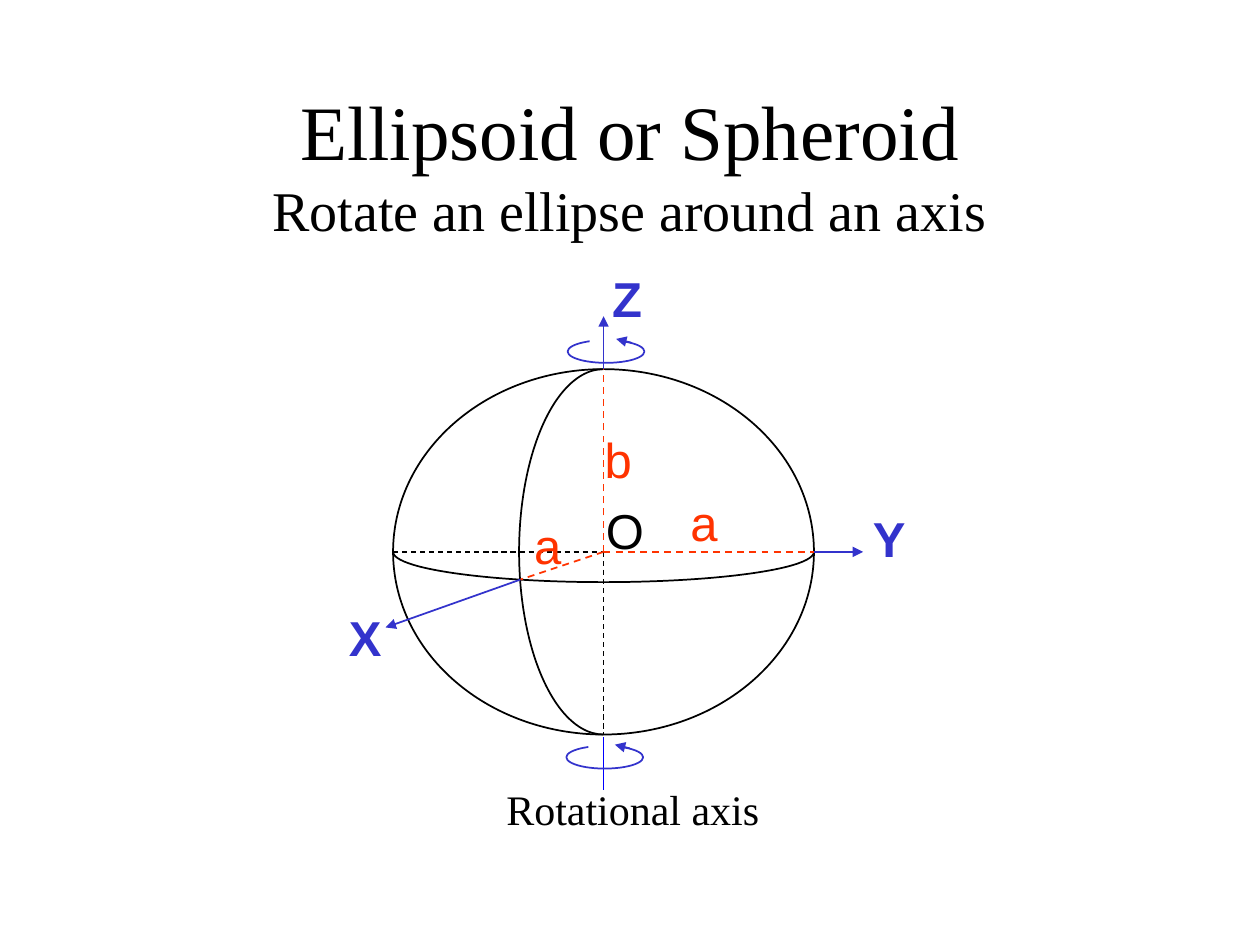
from lxml import etree
from pptx import Presentation
from pptx.dml.color import RGBColor
from pptx.enum.dml import MSO_LINE
from pptx.enum.shapes import MSO_CONNECTOR, MSO_SHAPE
from pptx.enum.text import MSO_ANCHOR, MSO_AUTO_SIZE, PP_ALIGN
from pptx.oxml.ns import qn
from pptx.util import Inches, Pt

STRAIGHT = MSO_CONNECTOR.STRAIGHT
ARC, OVAL = MSO_SHAPE.ARC, MSO_SHAPE.OVAL
DASH = MSO_LINE.DASH
MIDDLE = MSO_ANCHOR.MIDDLE
CENTER = PP_ALIGN.CENTER
FIT_SHAPE, FIXED = MSO_AUTO_SIZE.SHAPE_TO_FIT_TEXT, MSO_AUTO_SIZE.NONE
TITLE_ONLY = 5

BLACK, BLUE, RED, AXIS_BLUE = "000000", "3333CC", "FF3300", "0000FF"
SERIF, SANS = "Times New Roman", "Arial"

# Geometry of the spheroid, in inches
CENTER_X, CENTER_Y = 4.79, 4.38
RADIUS_A, RADIUS_B = 1.67, 1.45
LEFT, RIGHT = CENTER_X - RADIUS_A, CENTER_X + RADIUS_A
TOP, BOTTOM = CENTER_Y - RADIUS_B, CENTER_Y + RADIUS_B
ORIGIN = (CENTER_X, CENTER_Y)


def color(value):
    return RGBColor.from_string(value)


def add_span(para, text, size=28, font=SANS, fill=BLACK, bold=False):
    span = para.add_run()
    span.text = text
    span.font.size = Pt(size)
    span.font.name = font
    span.font.bold = bold
    span.font.color.rgb = color(fill)


def add_label(page, text, left, top, width, height=0.57, **style):
    box = page.shapes.add_textbox(*map(Inches, (left, top, width, height)))
    box.text_frame.word_wrap = False
    box.text_frame.auto_size = FIT_SHAPE
    add_span(box.text_frame.paragraphs[0], text, **style)


def add_line(page, start, end, stroke, width=1, dashed=False, arrow=False):
    line = page.shapes.add_connector(STRAIGHT, *map(Inches, (*start, *end)))
    line.line.color.rgb = color(stroke)
    line.line.width = Pt(width)
    if dashed:
        line.line.dash_style = DASH
    properties = line._element.spPr
    if arrow:
        outline = properties.find(qn("a:ln"))
        etree.SubElement(outline, qn("a:tailEnd"), type="triangle")
    etree.SubElement(properties, qn("a:effectLst"))


def add_curve(page, center, radius_x, radius_y, stroke=BLACK, angles=None):
    """Draw an ellipse, or the clockwise part of it between two angles."""
    x, y = center
    bounds = (x - radius_x, y - radius_y, 2 * radius_x, 2 * radius_y)
    curve = page.shapes.add_shape(ARC if angles else OVAL, *map(Inches, bounds))
    curve.shadow.inherit = False
    curve.fill.background()
    curve.line.color.rgb = color(stroke)
    curve.line.width = Pt(1)
    for index, angle in enumerate(angles or ()):
        curve.adjustments[index] = angle * 0.6  # 60000 units a degree


def add_rotation(page, x, y):
    add_curve(page, (x, y), 0.305, 0.09, BLUE, angles=(329, 212))
    add_line(page, (x + 0.2, y - 0.07), (x + 0.08, y - 0.1), BLUE, arrow=True)


def add_title(page):
    title = page.shapes.title
    title.left, title.top = Inches(0.75), Inches(0.67)
    title.width, title.height = Inches(8.5), Inches(1.25)
    frame = title.text_frame
    frame.auto_size = FIXED
    frame.vertical_anchor = MIDDLE
    para = frame.paragraphs[0]
    para.alignment = CENTER
    add_span(para, "Ellipsoid or Spheroid", size=44, font=SERIF)
    para.add_line_break()
    add_span(para, "Rotate an ellipse around an axis", size=32, font=SERIF)


def main():
    deck = Presentation()
    deck.slide_width, deck.slide_height = Inches(10), Inches(7.5)
    page = deck.slides.add_slide(deck.slide_layouts[TITLE_ONLY])
    add_title(page)

    # Outline, equator and meridian
    add_curve(page, ORIGIN, RADIUS_A, RADIUS_B)
    add_curve(page, ORIGIN, RADIUS_A, 0.24, angles=(0, 180))
    add_curve(page, ORIGIN, 0.67, RADIUS_B, angles=(90, 270))

    # Hidden halves of the axes
    for start, end in (((LEFT, CENTER_Y), ORIGIN), (ORIGIN, (CENTER_X, BOTTOM))):
        add_line(page, start, end, BLACK, width=0.75, dashed=True)

    # Semi-axes inside the body and the arrows that extend them
    axes = (
        ((4.13, 4.6), (3.06, 4.98)),
        ((RIGHT, CENTER_Y), (6.85, CENTER_Y)),
        ((CENTER_X, TOP), (CENTER_X, 2.51)),
    )
    for surface, tip in axes:
        add_line(page, ORIGIN, surface, RED, dashed=True)
        add_line(page, surface, tip, BLUE, arrow=True)

    # Rotational axis and its direction
    add_line(page, (CENTER_X, 5.85), (CENTER_X, 6.27), AXIS_BLUE, width=0.75)
    add_rotation(page, 4.81, 2.79)
    add_rotation(page, 4.8, 6.01)

    # Labels
    for text, left, top in (("X", 2.67, 4.77), ("Y", 6.83, 3.99), ("Z", 4.76, 2.08)):
        add_label(page, text, left, top, 0.45, fill=BLUE, bold=True)
    for text, left, top in (("a", 4.14, 4.04), ("a", 5.38, 3.86), ("b", 4.7, 3.36)):
        add_label(page, text, left, top, 0.42, fill=RED)
    add_label(page, "O", 4.71, 3.92, 0.5)
    add_label(page, "Rotational axis", 3.92, 6.17, 2.21, 0.5, size=24, font=SERIF)

    deck.save("out.pptx")


if __name__ == "__main__":
    main()
